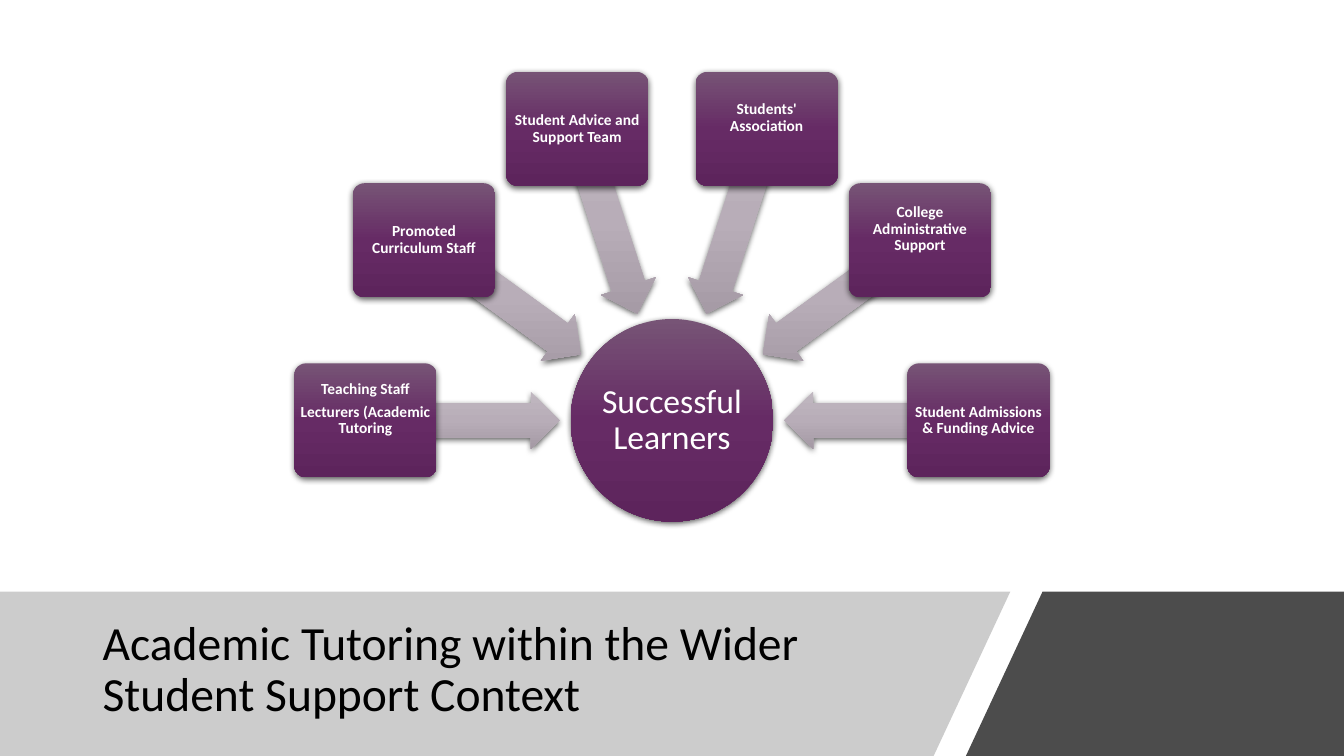
from dataclasses import dataclass
from math import cos, radians, sin

from pptx import Presentation
from pptx.dml.color import RGBColor
from pptx.enum.shapes import MSO_SHAPE
from pptx.enum.text import MSO_ANCHOR, PP_ALIGN
from pptx.oxml import parse_xml
from pptx.oxml.ns import nsdecls, qn
from pptx.util import Inches, Pt

ELLIPSE = MSO_SHAPE.OVAL
ROUNDED = MSO_SHAPE.ROUNDED_RECTANGLE
LEFT_ARROW = MSO_SHAPE.LEFT_ARROW
MIDDLE = MSO_ANCHOR.MIDDLE
LEFT, CENTER = PP_ALIGN.LEFT, PP_ALIGN.CENTER

FONT = "Calibri"
COLORS = {
    "title": "000000",
    "label": "FFFFFF",
    "shadow": "000000",
    "title_band": "808080",
    "corner_band": "000000",
    "plum_top": "775476", "plum_mid": "662B65", "plum_end": "5D245C",
    "mauve_top": "C0B7C0", "mauve_mid": "B8ADB8", "mauve_end": "A499A4",
}

# Radial layout: six groups on a half circle around the hub
SLIDE_W, SLIDE_H = 13.33, 7.5
HUB_X, HUB_Y, HUB_SIZE = SLIDE_W / 2, 4.17, 2.01
BOX_RADIUS, BOX_W, BOX_H = 3.04, 1.41, 1.13
ARROW_RADIUS, ARROW_W, ARROW_H = 2.08, 1.93, 0.57
INSET = 0.02
RAISED_INSET = 0.24


@dataclass(frozen=True)
class SupportGroup:
    label: str
    raised: bool = False


@dataclass(frozen=True)
class Band:
    color: str
    opacity: int
    corners: tuple[tuple[float, float], ...]


GROUPS = (
    SupportGroup("Teaching Staff\nLecturers (Academic Tutoring", raised=True),
    SupportGroup("Promoted Curriculum Staff"),
    SupportGroup("Student Advice and Support Team"),
    SupportGroup("Students' Association", raised=True),
    SupportGroup("College Administrative Support", raised=True),
    SupportGroup("Student Admissions & Funding Advice"),
)
BANDS = (
    Band("title_band", 40, ((0, 5.87), (10.02, 5.87), (9.26, 7.5), (0, 7.5))),
    Band("corner_band", 70, ((10.34, 5.87), (13.33, 5.87), (13.33, 7.5), (9.58, 7.5))),
)


def add_band(slide, band: Band) -> None:
    points = [(round(x * 100), round(y * 100)) for x, y in band.corners]
    builder = slide.shapes.build_freeform(*points[0], scale=Inches(1) / 100)
    builder.add_line_segments(points[1:], close=True)
    shape = builder.convert_to_shape()
    shape.shadow.inherit = False
    shape.line.fill.background()
    shape.fill.solid()
    shape.fill.fore_color.rgb = RGBColor.from_string(COLORS[band.color])
    color = shape._element.spPr.find(".//" + qn("a:srgbClr"))
    color.append(parse_xml(f'<a:alpha {nsdecls("a")} val="{band.opacity * 1000}"/>'))


def add_glossy(slide, kind, x: float, y: float, width: float, height: float, tone: str):
    """Add a shape centred on x, y with a vertical gradient and a soft shadow."""
    shape = slide.shapes.add_shape(kind, Inches(x - width / 2), Inches(y - height / 2),
                                   Inches(width), Inches(height))
    shape.line.fill.background()
    shape.fill.background()
    shape.shadow.inherit = False
    properties = shape._element.spPr
    stops = "".join(
        f'<a:gs pos="{position}"><a:srgbClr val="{COLORS[tone + part]}"/></a:gs>'
        for position, part in ((0, "_top"), (50000, "_mid"), (100000, "_end")))
    properties.replace(properties.find(qn("a:noFill")), parse_xml(
        f'<a:gradFill {nsdecls("a")} rotWithShape="0"><a:gsLst>{stops}</a:gsLst>'
        '<a:lin ang="5400000" scaled="0"/></a:gradFill>'))
    properties.find(qn("a:effectLst")).append(parse_xml(
        f'<a:outerShdw {nsdecls("a")} blurRad="{Pt(4.5)}" dist="{Pt(1.5)}" dir="5400000" '
        f'algn="ctr" rotWithShape="0"><a:srgbClr val="{COLORS["shadow"]}">'
        '<a:alpha val="63000"/></a:srgbClr></a:outerShdw>'))
    return shape


def set_text(shape, text: str, size: int, color: str, align, bold: bool = False) -> None:
    frame = shape.text_frame
    frame.text = text
    frame.word_wrap = True
    frame.vertical_anchor = MIDDLE
    for paragraph in frame.paragraphs:
        paragraph.alignment = align
        paragraph.line_spacing = 0.9
        paragraph.space_after = Pt(4)
        for run in paragraph.runs:
            run.font.name = FONT
            run.font.size = Pt(size)
            run.font.bold = bold
            run.font.color.rgb = RGBColor.from_string(COLORS[color])


def set_insets(shape, side: float = INSET, bottom: float = INSET) -> None:
    frame = shape.text_frame
    frame.margin_left = frame.margin_right = Inches(side)
    frame.margin_top = Inches(INSET)
    frame.margin_bottom = Inches(bottom)


def add_group(slide, group: SupportGroup, angle: float) -> None:
    dx, dy = cos(radians(angle)), sin(radians(angle))
    arrow = add_glossy(slide, LEFT_ARROW, HUB_X + ARROW_RADIUS * dx,
                       HUB_Y + ARROW_RADIUS * dy, ARROW_W, ARROW_H, "mauve")
    arrow.adjustments[0] = 0.6
    arrow.adjustments[1] = 0.5
    arrow.rotation = angle % 360
    box = add_glossy(slide, ROUNDED, HUB_X + BOX_RADIUS * dx,
                     HUB_Y + BOX_RADIUS * dy, BOX_W, BOX_H, "plum")
    box.adjustments[0] = 0.1
    set_text(box, group.label, 11, "label", CENTER, bold=True)
    set_insets(box, bottom=RAISED_INSET if group.raised else INSET)


def main() -> None:
    deck = Presentation()
    deck.slide_width, deck.slide_height = Inches(SLIDE_W), Inches(SLIDE_H)
    slide = deck.slides.add_slide(deck.slide_layouts[6])

    # Footer bands and title
    for band in BANDS:
        add_band(slide, band)
    title = slide.shapes.add_textbox(Inches(0.92), Inches(6.05), Inches(8.44), Inches(1.2))
    set_text(title, "Academic Tutoring within the Wider Student Support Context",
             34, "title", LEFT)

    # Hub, with no side insets so that its longest word fits on one line
    hub = add_glossy(slide, ELLIPSE, HUB_X, HUB_Y, HUB_SIZE, HUB_SIZE, "plum")
    set_text(hub, "Successful Learners", 24, "label", CENTER)
    set_insets(hub, side=0)

    # Support groups with arrows pointing at the hub
    step = 180 / (len(GROUPS) - 1)
    for index, group in enumerate(GROUPS):
        add_group(slide, group, 180 + index * step)

    deck.save("out.pptx")


if __name__ == "__main__":
    main()
